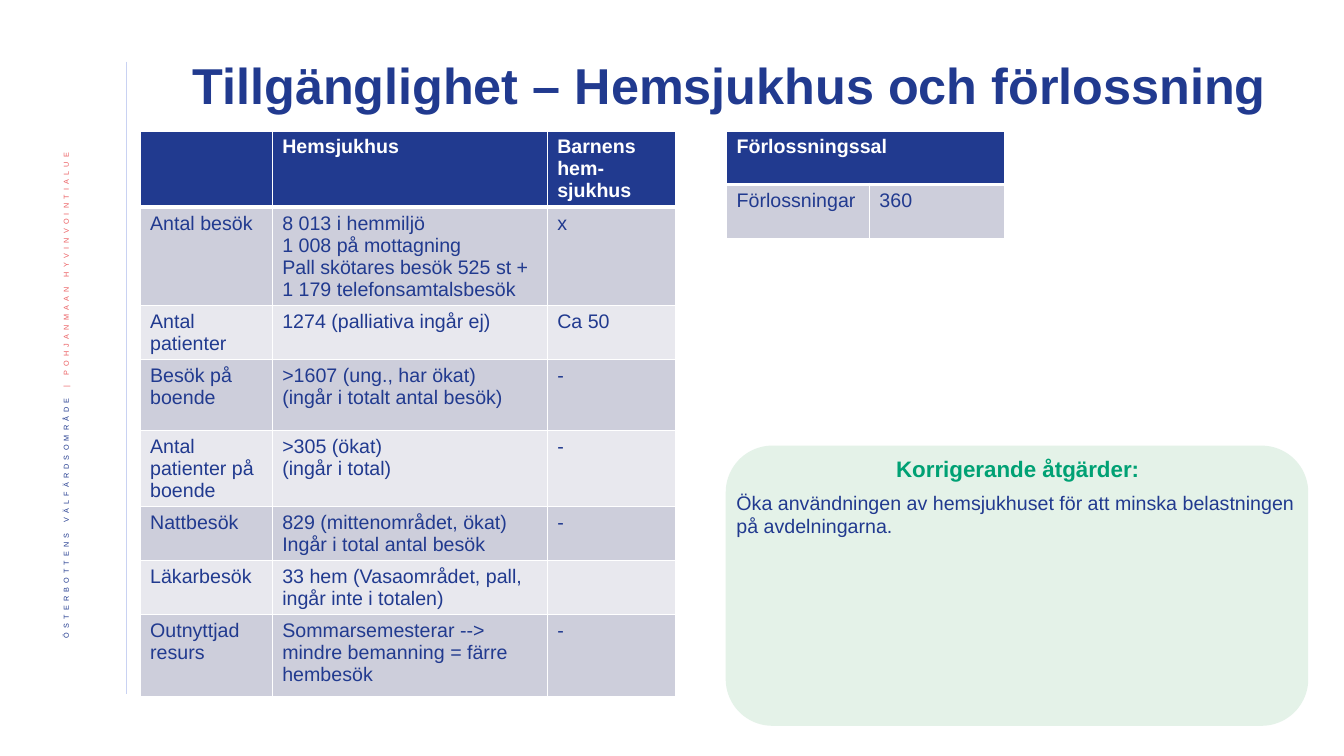
import pptx
import pptx.util
import pptx.dml.color
import pptx.enum.shapes
import pptx.enum.text
import pptx.oxml.ns
import lxml.etree

Cm = pptx.util.Cm
Pt = pptx.util.Pt
qn = pptx.oxml.ns.qn
Align = pptx.enum.text.PP_ALIGN
Anchor = pptx.enum.text.MSO_ANCHOR

COLOURS = {
    "navy": "213A8F",
    "coral": "EB5C5F",
    "green": "00A174",
    "mint": "85C598",
    "rule": "C9D2F2",
    "band_dark": "CDCEDB",
    "band_light": "E8E8EE",
    "white": "FFFFFF",
}

HOME_CARE = [
    ["", "Hemsjukhus", "Barnens hem-sjukhus"],
    ["Antal besök",
     "8 013 i hemmiljö\n1 008 på mottagning\n"
     "Pall skötares besök 525 st + 1 179 telefonsamtalsbesök", "x"],
    ["Antal patienter", "1274 (palliativa ingår ej)", "Ca 50"],
    ["Besök på boende", ">1607 (ung., har ökat)\n(ingår i totalt antal besök)", "-"],
    ["Antal patienter på boende", ">305 (ökat)\n(ingår i total)", "-"],
    ["Nattbesök", "829 (mittenområdet, ökat)\nIngår i total antal besök", "-"],
    ["Läkarbesök", "33 hem (Vasaområdet, pall, ingår inte i totalen)", ""],
    ["Outnyttjad resurs", "Sommarsemesterar --> mindre bemanning = färre hembesök", "-"],
]
DELIVERY = [["Förlossningssal", ""], ["Förlossningar", "360"]]


class SlideBuilder:
    font_name = "Arial"
    text_size = 14

    def __init__(self, slide):
        self.slide = slide

    def colour(self, name):
        return pptx.dml.color.RGBColor.from_string(COLOURS[name])

    def style(self, paragraph, colour="navy", size=text_size, bold=False):
        font = paragraph.font
        font.name, font.size, font.bold = self.font_name, Pt(size), bold
        font.color.rgb = self.colour(colour)

    def title(self, text, *box):
        heading = self.slide.shapes.title
        heading.left, heading.top, heading.width, heading.height = map(Cm, box)
        frame = heading.text_frame
        frame.text = text
        frame.auto_size = pptx.enum.text.MSO_AUTO_SIZE.NONE
        frame.vertical_anchor = Anchor.MIDDLE
        paragraph = frame.paragraphs[0]
        paragraph.alignment = Align.LEFT
        paragraph.line_spacing = 0.9
        self.style(paragraph, size=36, bold=True)

    def rule(self, *ends):
        line = self.slide.shapes.add_connector(
            pptx.enum.shapes.MSO_CONNECTOR.STRAIGHT, *map(Cm, ends))
        line.line.color.rgb = self.colour("rule")
        line.line.width = Pt(0.5)
        lxml.etree.SubElement(line._element.spPr, qn("a:effectLst"))

    def text_box(self, *box):
        frame = self.slide.shapes.add_textbox(*map(Cm, box)).text_frame
        frame.word_wrap = True
        return frame

    def vertical_banner(self, parts, *box):
        frame = self.text_box(*box)
        frame.vertical_anchor = Anchor.MIDDLE
        frame._txBody.bodyPr.set("vert", "vert270")
        paragraph = frame.paragraphs[0]
        paragraph.alignment = Align.RIGHT
        paragraph.line_spacing = 0.9
        for text, colour in parts:
            run = paragraph.add_run()
            run.text = text
            run.font.name, run.font.size = self.font_name, Pt(9)
            run.font.color.rgb = self.colour(colour)
            run._r.rPr.set("baseline", "30000")
            run._r.rPr.set("spc", "300")

    def borders(self, cell, row):
        widths = {"L": 1, "R": 1, "T": 3 if row == 1 else 1, "B": 3 if row == 0 else 1}
        for position, (side, width) in enumerate(widths.items()):
            edge = lxml.etree.Element(qn("a:ln" + side), w=str(Pt(width)))
            fill = lxml.etree.SubElement(edge, qn("a:solidFill"))
            lxml.etree.SubElement(fill, qn("a:srgbClr"), val=COLOURS["white"])
            cell._tc.get_or_add_tcPr().insert(position, edge)

    def table(self, rows, left, top, widths, heights):
        table = self.slide.shapes.add_table(
            len(rows), len(widths), Cm(left), Cm(top),
            Cm(sum(widths)), Cm(sum(heights))).table
        table.first_row = table.horz_banding = False
        for column, width in zip(table.columns, widths):
            column.width = Cm(width)
        for r, (values, height) in enumerate(zip(rows, heights)):
            table.rows[r].height = Cm(height)
            header = r == 0
            band = "navy" if header else ("band_light", "band_dark")[r % 2]
            for c, value in enumerate(values):
                cell = table.cell(r, c)
                cell.text = value
                cell.fill.solid()
                cell.fill.fore_color.rgb = self.colour(band)
                self.borders(cell, r)
                for paragraph in cell.text_frame.paragraphs:
                    self.style(paragraph, "white" if header else "navy", bold=header)
        return table

    def panel(self, *box):
        panel = self.slide.shapes.add_shape(
            pptx.enum.shapes.MSO_SHAPE.ROUNDED_RECTANGLE, *map(Cm, box))
        panel.shadow.inherit = False
        panel.line.fill.background()
        panel.fill.solid()
        panel.fill.fore_color.rgb = self.colour("mint")
        tint = panel._element.spPr.find(qn("a:solidFill"))[0]
        lxml.etree.SubElement(tint, qn("a:alpha"), val="22000")

    def note(self, heading, body, *box):
        frame = self.text_box(*box)
        frame.text = heading + "\n" + body
        lead, detail = frame.paragraphs
        lead.alignment = Align.CENTER
        lead.space_after = Pt(6)
        self.style(lead, "green", 16, True)
        self.style(detail)


def main():
    deck = pptx.Presentation()
    deck.slide_width, deck.slide_height = Cm(33.87), Cm(19.05)
    page = SlideBuilder(deck.slides.add_slide(deck.slide_layouts[5]))
    page.rule(3.18, 1.55, 3.18, 17.48)
    page.vertical_banner(
        [("ÖSTERBOTTENS VÄLFÄRDSOMRÅDE ", "navy"),
         ("| POHJANMAAN HYVINVOINTIALUE", "coral")],
        1.07, 3.61, 1.32, 14.55)
    page.title("Tillgänglighet – Hemsjukhus och förlossning", 4.6, 1.14, 27.89, 2.16)
    page.table(HOME_CARE, 3.53, 3.3, [3.33, 6.93, 3.23],
               [1.75, 2.29, 1.24, 1.78, 1.75, 1.24, 1.24, 2.06])
    delivery = page.table(DELIVERY, 18.31, 3.3, [3.6, 3.4], [1.35, 1.35])
    delivery.cell(0, 0).merge(delivery.cell(0, 1))
    page.panel(18.29, 11.23, 14.68, 7.06)
    page.note("Korrigerande åtgärder:",
              "Öka användningen av hemsjukhuset för att minska belastningen på avdelningarna.",
              18.31, 11.35, 14.68, 4.32)
    deck.save("out.pptx")


if __name__ == "__main__":
    main()
